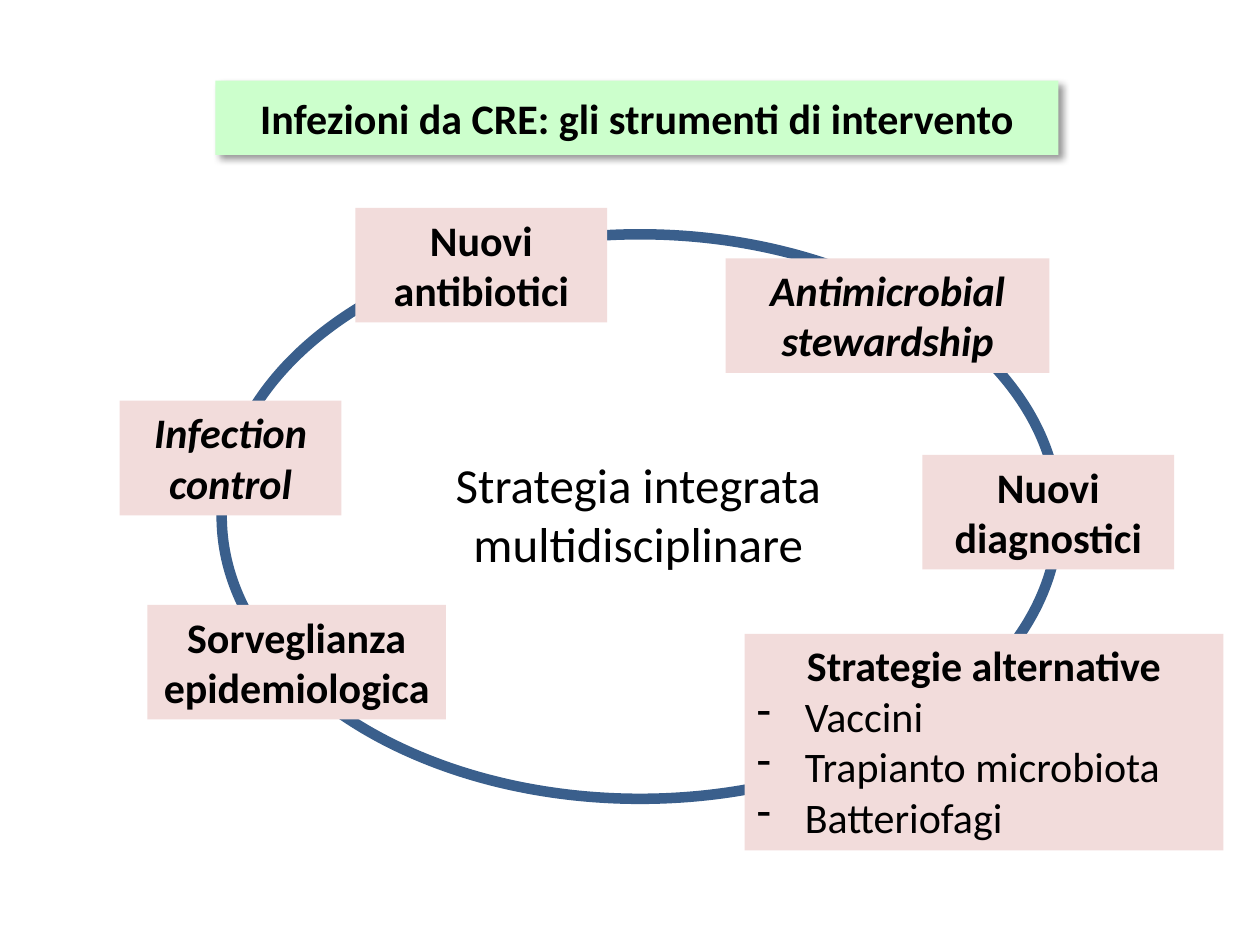
from lxml.etree import SubElement
from pptx import Presentation
from pptx.dml.color import RGBColor
from pptx.enum.shapes import MSO_SHAPE as Shape
from pptx.enum.text import MSO_ANCHOR as Anchor, MSO_AUTO_SIZE as AutoSize, PP_ALIGN as Align
from pptx.oxml.ns import qn
from pptx.util import Inches, Pt

TOPICS = [
    ((0.95, 3.18, 1.76, 0.91), ["Infection control"], True),
    ((5.76, 2.05, 2.57, 0.91), ["Antimicrobial stewardship"], True),
    ((2.82, 1.65, 2, 0.91), ["Nuovi antibiotici"], False),
    ((1.17, 4.8, 2.37, 0.91), ["Sorveglianza", "epidemiologica"], False),
    ((7.32, 3.61, 2, 0.91), ["Nuovi diagnostici"], False),
]
ALTERNATIVES = ["Vaccini", "Trapianto microbiota", "Batteriofagi"]


def rgb(value):
    return RGBColor.from_string(value)


class SlideBuilder:
    """Holds the style and the current slide, and adds each kind of element."""

    font = "Calibri"
    ink = "000000"
    title_fill = "CCFFCC"
    topic_fill = "F2DCDB"
    ring_color = "3A5F8C"

    def __init__(self, page):
        self.page = page

    def shape(self, kind, at, fill=None):
        box = self.page.shapes.add_shape(kind, *map(Inches, at))
        box.shadow.inherit = False
        box.line.fill.background()
        if fill:
            box.fill.solid()
            box.fill.fore_color.rgb = rgb(fill)
        else:
            box.fill.background()
        return box

    def line_of_text(self, box, text, size=24, align=Align.CENTER, **formats):
        frame = box.text_frame
        para = frame.add_paragraph() if frame.text else frame.paragraphs[0]
        para.alignment = align
        span = para.add_run()
        span.text = text
        values = {"name": self.font, "size": Pt(size), **formats}
        for name, value in values.items():
            setattr(span.font, name, value)
        span.font.color.rgb = rgb(self.ink)
        return para

    def bullet(self, box, text):
        para = self.line_of_text(box, text, align=Align.LEFT, bold=False)
        props = para._p.get_or_add_pPr()
        indent = Inches(0.38)
        props.set("marL", str(indent))
        props.set("indent", str(-indent))
        SubElement(props, qn("a:buChar"), char="-")

    def drop_shadow(self, box):
        effects = box._element.spPr.find(qn("a:effectLst"))
        shadow = SubElement(effects, qn("a:outerShdw"), blurRad=str(Pt(4)), dist=str(Pt(3)),
                            dir=str(45 * 60000), algn="tl", rotWithShape="0")
        color = SubElement(shadow, qn("a:srgbClr"), val=self.ink)
        SubElement(color, qn("a:alpha"), val="40000")

    def title(self, at, text):
        box = self.shape(Shape.RECTANGLE, at, self.title_fill)
        box.text_frame.vertical_anchor = Anchor.MIDDLE
        self.line_of_text(box, text, bold=True)
        self.drop_shadow(box)

    def ring(self, at):
        ring = self.shape(Shape.OVAL, at)
        ring.line.color.rgb = rgb(self.ring_color)
        ring.line.width = Pt(6)

    def topic(self, at, lines, italic=False, bullets=()):
        box = self.shape(Shape.RECTANGLE, at, self.topic_fill)
        frame = box.text_frame
        frame.word_wrap = True
        frame.vertical_anchor = Anchor.TOP
        frame.auto_size = AutoSize.SHAPE_TO_FIT_TEXT
        for line in lines:
            self.line_of_text(box, line, bold=True, italic=italic)
        for item in bullets:
            self.bullet(box, item)

    def label(self, at, lines):
        box = self.page.shapes.add_textbox(*map(Inches, at))
        box.text_frame.word_wrap = False
        box.text_frame.auto_size = AutoSize.SHAPE_TO_FIT_TEXT
        for line in lines:
            self.line_of_text(box, line, size=28)


def main():
    deck = Presentation()
    deck.slide_width, deck.slide_height = Inches(10), Inches(7.5)
    builder = SlideBuilder(deck.slides.add_slide(deck.slide_layouts[6]))
    builder.title((1.71, 0.64, 6.69, 0.59), "Infezioni da CRE: gli strumenti di intervento")
    builder.ring((1.76, 1.86, 6.64, 4.48))
    for at, lines, italic in TOPICS:
        builder.topic(at, lines, italic)
    builder.label((3.5, 3.56, 3.13, 1.04), ["Strategia integrata", "multidisciplinare"])
    builder.topic((5.91, 5.03, 3.8, 1.72), ["Strategie alternative"], bullets=ALTERNATIVES)
    deck.save("out.pptx")


if __name__ == "__main__":
    main()
